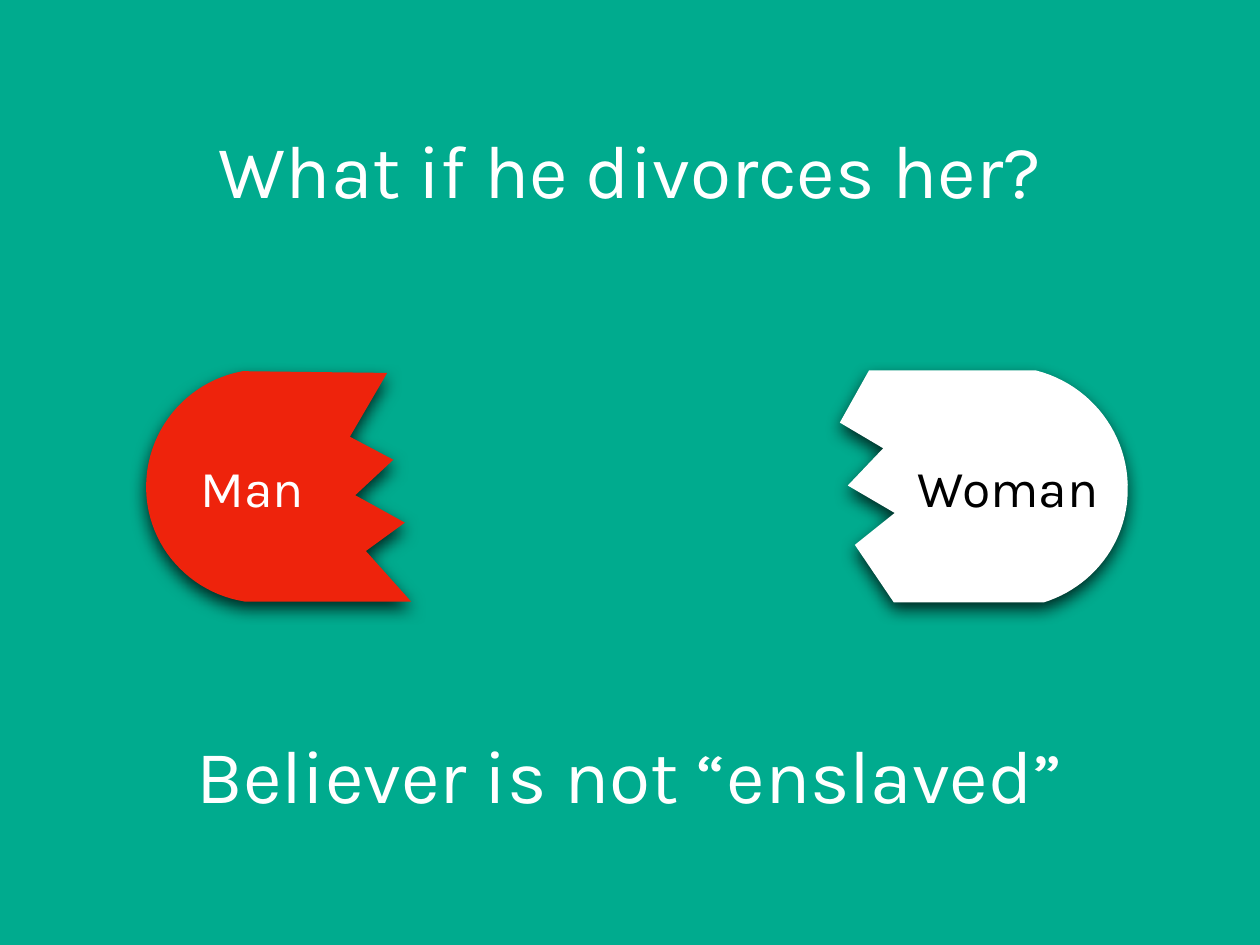
from lxml.etree import SubElement
from pptx import Presentation
from pptx.dml.color import RGBColor
from pptx.enum.text import MSO_ANCHOR, PP_ALIGN
from pptx.oxml.ns import qn
from pptx.util import Inches, Pt

COLUMNS, ROWS = 128, 96
TEAL, RED, WHITE, BLACK = "00AB8E", "EE230C", "FFFFFF", "000000"

MAN_HALF = [
    (39.33, 37.89), (35.55, 44.37), (39.96, 46.71), (36.09, 50.31),
    (41.13, 53.1), (37.17, 55.98), (41.76, 61.11), (24.84, 61.11),
    (19.26, 60.21, 15.03, 55.53, 14.85, 49.86),
    (14.67, 43.92, 18.81, 38.79, 24.66, 37.71),
]
WOMAN_HALF = [
    (90.81, 61.2), (106.02, 61.2),
    (110.97, 59.67, 114.48, 55.17, 114.57, 49.95),
    (114.75, 44.19, 110.88, 39.06, 105.21, 37.62),
    (88.29, 37.62), (85.32, 42.93), (89.73, 45.54), (86.13, 49.32),
    (90.9, 52.11), (86.85, 55.35),
]


def color(value):
    """Turn a hex string into a colour."""
    return RGBColor.from_string(value)


def write(frame, text, size=61, ink=WHITE, font="Karla"):
    """Put one centred line of formatted text into a text frame."""
    frame.word_wrap = True
    frame.vertical_anchor = MSO_ANCHOR.MIDDLE
    frame.margin_left = frame.margin_right = Inches(0.06)
    frame.margin_top = frame.margin_bottom = Inches(0.06)
    paragraph = frame.paragraphs[0]
    paragraph.alignment = PP_ALIGN.CENTER
    run = paragraph.add_run()
    run.text = text
    run.font.size, run.font.name = Pt(size), font
    run.font.color.rgb = color(ink)


def flatten(outline, steps=24):
    """Turn corners and cubic curves into a list of points."""
    points = []
    for part in outline:
        if len(part) == 2:
            points.append(part)
            continue
        start, nodes = points[-1], (part[:2], part[2:4], part[4:])
        for step in range(1, steps + 1):
            t = step / steps
            weights = ((1 - t) ** 3, 3 * t * (1 - t) ** 2, 3 * t * t * (1 - t), t ** 3)
            points.append(tuple(
                sum(w * node[axis] for w, node in zip(weights, (start, *nodes)))
                for axis in (0, 1)))
    return points


class Board:
    """Hold the slide and its grid, and draw each kind of element."""

    def __init__(self, deck, background):
        """Add a title-only slide with a plain background."""
        self.slide = deck.slides.add_slide(deck.slide_layouts[5])
        self.column = deck.slide_width / COLUMNS
        self.row = deck.slide_height / ROWS
        fill = self.slide.background.fill
        fill.solid()
        fill.fore_color.rgb = color(background)

    def at(self, column, row):
        """Convert grid units to slide lengths."""
        return round(column * self.column), round(row * self.row)

    def title(self, text, left, top, width, height):
        """Place and fill the title."""
        heading = self.slide.shapes.title
        heading.left, heading.top = self.at(left, top)
        heading.width, heading.height = self.at(width, height)
        write(heading.text_frame, text)

    def label(self, shapes, text, left, top, width, height, **style):
        """Add a text box."""
        box = shapes.add_textbox(*self.at(left, top), *self.at(width, height))
        write(box.text_frame, text, **style)

    def half(self, shapes, outline, fill):
        """Add a broken half with a soft shadow below it."""
        start, *rest = [self.at(*point) for point in flatten(outline)]
        builder = shapes.build_freeform(*start, scale=1.0)
        builder.add_line_segments(rest, close=True)
        piece = builder.convert_to_shape()
        piece.fill.solid()
        piece.fill.fore_color.rgb = color(fill)
        piece.line.fill.background()
        piece.shadow.inherit = False
        effects = piece.element.spPr.find(qn("a:effectLst"))
        shadow = SubElement(effects, qn("a:outerShdw"), blurRad=str(Pt(14)),
                            dist=str(Pt(5.9)), dir="5400000", rotWithShape="0")
        tint = SubElement(shadow, qn("a:srgbClr"), val=BLACK)
        SubElement(tint, qn("a:alpha"), val="76000")


def main():
    """Build the slide and save it."""
    deck = Presentation()
    deck.slide_width, deck.slide_height = Inches(14.22), Inches(10.67)
    board = Board(deck, TEAL)
    shapes = board.slide.shapes
    board.title("What if he divorces her?", 0, 11.43, COLUMNS, 11.34)
    board.label(shapes, "Believer is not “enslaved”", 11.61, 72.9, 104.76, 11.34)
    woman_group = None
    for person, outline, fill, ink, left in (
        ("Man", MAN_HALF, RED, WHITE, 8.64),
        ("Woman", WOMAN_HALF, WHITE, BLACK, 85.41),
    ):
        group = shapes.add_group_shape().shapes if person == "Woman" else shapes
        board.half(group, outline, fill)
        board.label(group, person, left, 45.36, 34.02, 8.1, size=42, ink=ink)
    deck.save("out.pptx")


if __name__ == "__main__":
    main()
